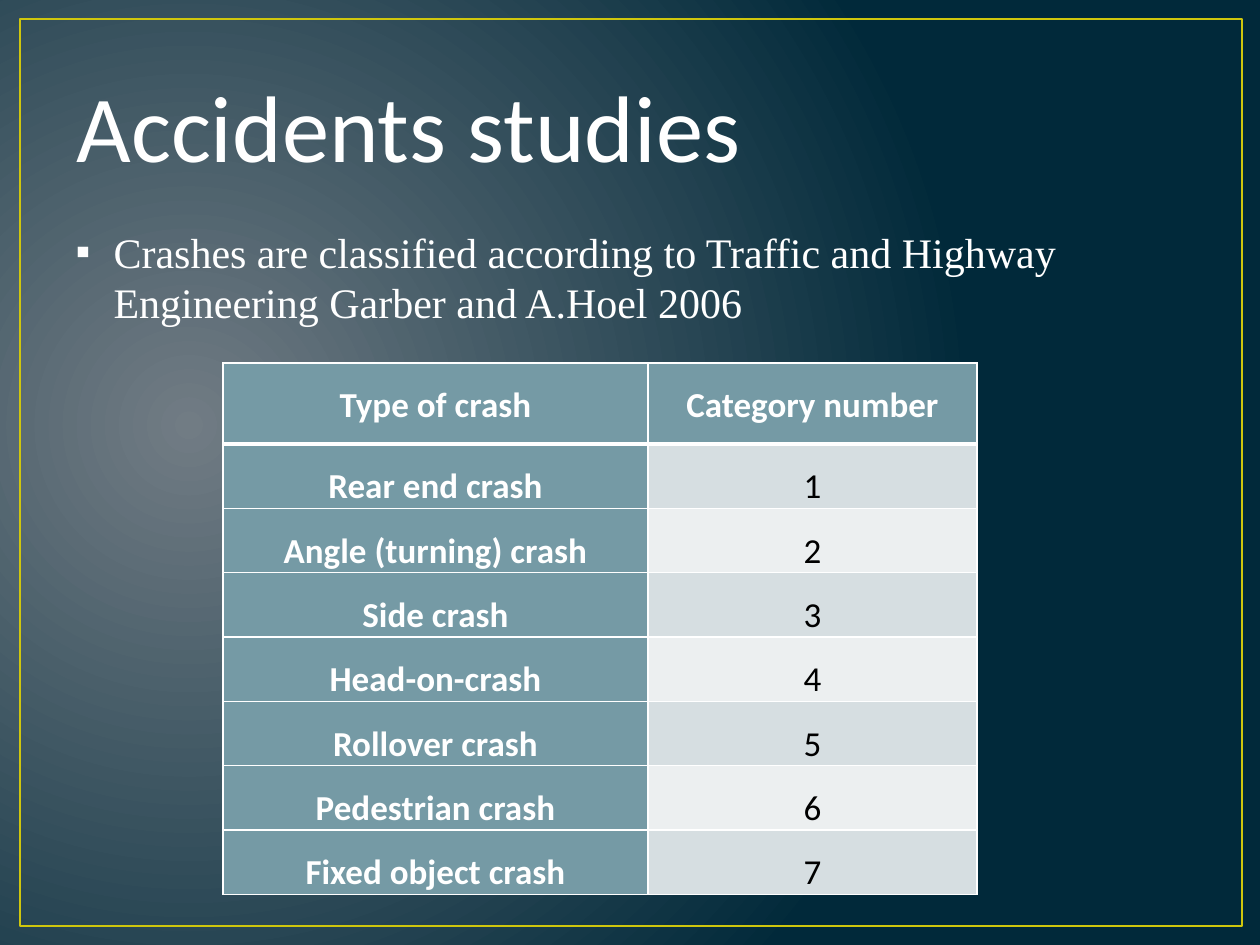
import pptx
import pptx.dml.color
import pptx.enum.shapes
import pptx.enum.text
import pptx.oxml
import pptx.oxml.ns
import pptx.util

PX = 914400 // 126
RGB = pptx.dml.color.RGBColor
WHITE = RGB(0xFF, 0xFF, 0xFF)
BLACK = RGB(0x00, 0x00, 0x00)
GLOW = RGB(0x71, 0x7C, 0x84)
NAVY = RGB(0x01, 0x29, 0x3A)
YELLOW = RGB(0xCF, 0xC6, 0x0D)
TEAL = RGB(0x75, 0x9A, 0xA5)
BANDS = [RGB(0xEC, 0xEF, 0xF0), RGB(0xD6, 0xDE, 0xE1)]
CENTER = pptx.enum.text.PP_ALIGN.CENTER
NS = pptx.oxml.ns.nsdecls("a")


def place(shape, left, top, width, height):
    box = {"left": left, "top": top, "width": width, "height": height}
    for name, value in box.items():
        setattr(shape, name, value * PX)


def style(font, color, **values):
    font.color.rgb = color
    for name, value in values.items():
        setattr(font, name, value)


deck = pptx.Presentation()
deck.slide_width = pptx.util.Inches(10)
deck.slide_height = pptx.util.Inches(7.5)
page = deck.slides.add_slide(deck.slide_layouts[1])

# Background: glow at the left fading to navy
backdrop = page.background.fill
backdrop.gradient()
for stop, color in zip(backdrop.gradient_stops, (GLOW, NAVY)):
    stop.color.rgb = color
linear = page.element.find(".//" + pptx.oxml.ns.qn("a:lin"))
linear.getparent().replace(linear, pptx.oxml.parse_xml(
    f'<a:path {NS} path="circle">'
    '<a:fillToRect l="15000" t="50000" r="85000" b="60000"/></a:path>'))

# Yellow frame behind everything else
frame = page.shapes.add_shape(pptx.enum.shapes.MSO_SHAPE.RECTANGLE, 0, 0, PX, PX)
place(frame, 20, 19, 1222, 907)
frame.shadow.inherit = False
frame.fill.background()
frame.line.color.rgb = YELLOW
frame.line.width = pptx.util.Pt(1.5)
frame.element.getparent().insert(2, frame.element)

# Title
title = page.shapes.title
place(title, 64, 45, 1050, 159)
title.text_frame.text = "Accidents studies"
title.text_frame.vertical_anchor = pptx.enum.text.MSO_ANCHOR.MIDDLE
para = title.text_frame.paragraphs[0]
para.alignment = pptx.enum.text.PP_ALIGN.LEFT
style(para.runs[0].font, WHITE, name="Calibri", size=pptx.util.Pt(54))

# Bulleted statement
body = page.placeholders[1]
place(body, 63, 220, 1134, 624)
body.text_frame.text = ("Crashes are classified according to Traffic and Highway "
                        "Engineering Garber and A.Hoel 2006")
para = body.text_frame.paragraphs[0]
settings = para._p.get_or_add_pPr()
settings.set("marL", str(38 * PX))
settings.set("indent", str(-38 * PX))
settings.append(pptx.oxml.parse_xml(f'<a:buChar {NS} char="▪"/>'))
style(para.runs[0].font, WHITE, name="Times New Roman", size=pptx.util.Pt(24))

# Crash table: categories are numbered in order
crashes = ["Rear end crash", "Angle (turning) crash", "Side crash", "Head-on-crash",
           "Rollover crash", "Pedestrian crash", "Fixed object crash"]
rows = [("Type of crash", "Category number")]
rows += [(crash, str(number)) for number, crash in enumerate(crashes, 1)]
holder = page.shapes.add_table(len(rows), 2, 223 * PX, 363 * PX, 754 * PX, 515 * PX)
table = holder.table
for column, width in zip(table.columns, (425, 329)):
    column.width = width * PX

for r, texts in enumerate(rows):
    table.rows[r].height = (62 if r else 81) * PX
    for c, text in enumerate(texts):
        cell = table.cell(r, c)
        heading = r == 0 or c == 0
        cell.text = text
        cell.margin_left = cell.margin_right = 9 * PX
        cell.margin_top = cell.margin_bottom = 0
        cell.fill.solid()
        cell.fill.fore_color.rgb = TEAL if heading else BANDS[r % 2]
        para = cell.text_frame.paragraphs[0]
        para.alignment = CENTER
        para.line_spacing = 1.5
        style(para.runs[0].font, WHITE if heading else BLACK,
              name="Calibri", size=pptx.util.Pt(20), bold=heading)

        # White rules, heavier between header and first row
        for index, side in enumerate("LRTB"):
            heavy = (r, side) in ((0, "B"), (1, "T"))
            width = pptx.util.Pt(3 if heavy else 1)
            cell._tc.get_or_add_tcPr().insert(index, pptx.oxml.parse_xml(
                f'<a:ln{side} {NS} w="{width}"><a:solidFill>'
                f'<a:srgbClr val="{WHITE}"/></a:solidFill></a:ln{side}>'))

deck.save("out.pptx")
